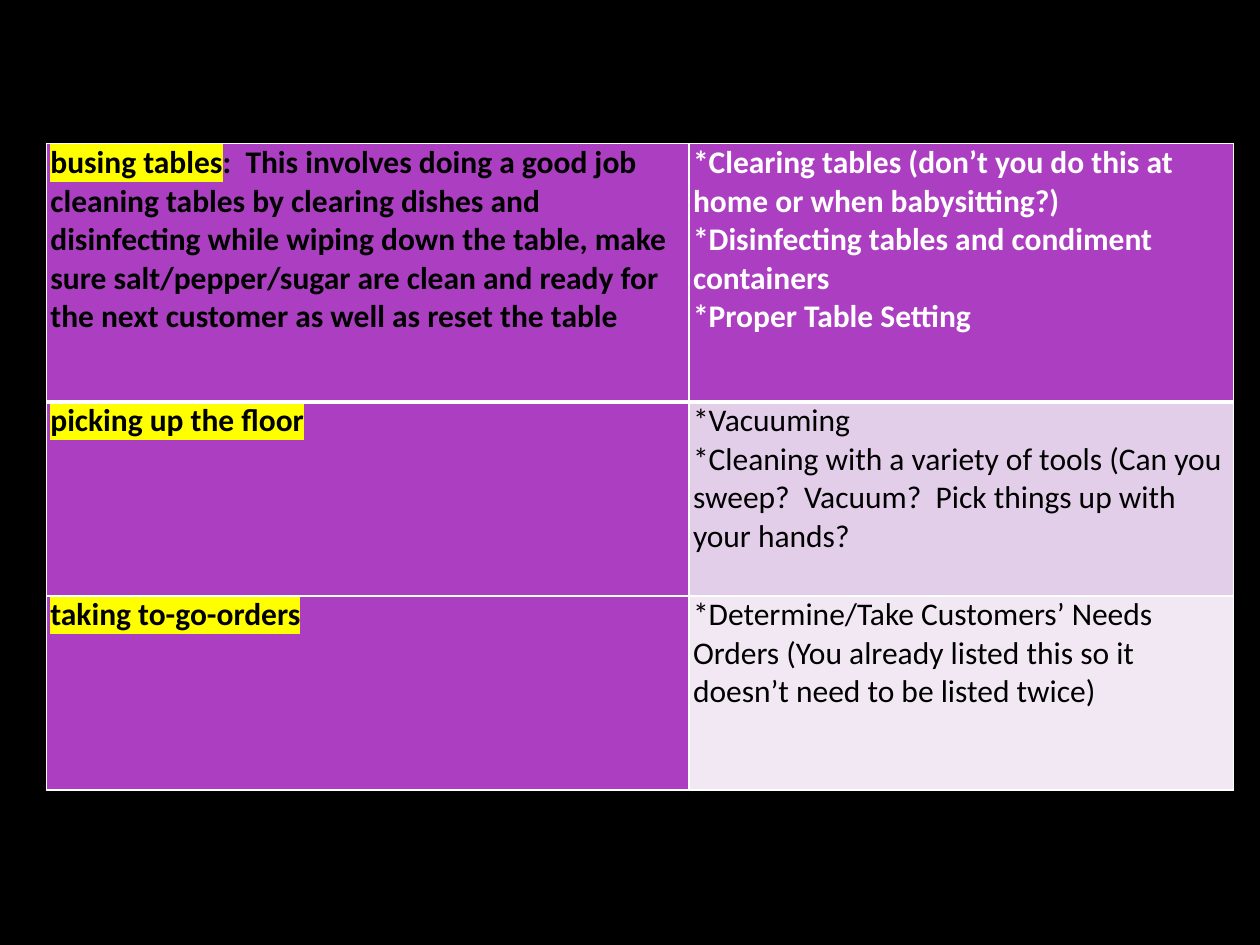
from lxml import etree
from pptx import Presentation
from pptx import util as u
from pptx.dml.color import RGBColor
from pptx.oxml import ns

# Content: (highlighted duty, explanation), then the skills it builds
ROWS = [
    (("busing tables",
      ":  This involves doing a good job cleaning tables by clearing dishes and "
      "disinfecting while wiping down the table, make sure salt/pepper/sugar are "
      "clean and ready for the next customer as well as reset the table"),
     ["*Clearing tables (don’t you do this at home or when babysitting?)",
      "*Disinfecting tables and condiment containers",
      "*Proper Table Setting"]),
    (("picking up the floor", ""),
     ["*Vacuuming",
      "*Cleaning with a variety of tools (Can you sweep?  Vacuum?  "
      "Pick things up with your hands?"]),
    (("taking to-go-orders", ""),
     ["*Determine/Take Customers’ Needs  Orders (You already listed this so it "
      "doesn’t need to be listed twice)"]),
]

COLORS = {"black": "000000", "white": "FFFFFF", "purple": "AC3EC1",
          "lilac": "E3CEE9", "pale": "F1E8F4", "yellow": "FFFF00"}
SKILL_FILLS = ["purple", "lilac", "pale"]
FONT, FONT_SIZE = "Calibri", 18
LEFT, TOP = 26.64, 82.08
COLUMN_WIDTHS = [367.2, 311.04]
ROW_HEIGHTS = [147.6, 110.88, 110.88]
THIN, THICK = 1, 3


def rgb(name):
    return RGBColor.from_string(COLORS[name])


def add_run(paragraph, words, color, bold, highlight=None):
    run = paragraph.add_run()
    run.text = words
    font = run.font
    font.name, font.size, font.bold = FONT, u.Pt(FONT_SIZE), bold
    font.color.rgb = rgb(color)
    if highlight:
        properties = run._r.get_or_add_rPr()
        mark = etree.Element(ns.qn("a:highlight"))
        etree.SubElement(mark, ns.qn("a:srgbClr"), val=COLORS[highlight])
        properties.find(ns.qn("a:solidFill")).addnext(mark)


def style_cell(cell, fill, top, bottom):
    cell.margin_left = cell.margin_right = u.Pt(2.16)
    cell.margin_top = cell.margin_bottom = 0
    properties = cell._tc.get_or_add_tcPr()
    for side, width in (("L", THIN), ("R", THIN), ("T", top), ("B", bottom)):
        line = etree.SubElement(properties, ns.qn(f"a:ln{side}"), w=str(u.Pt(width)))
        solid = etree.SubElement(line, ns.qn("a:solidFill"))
        etree.SubElement(solid, ns.qn("a:srgbClr"), val=COLORS["white"])
    cell.fill.solid()
    cell.fill.fore_color.rgb = rgb(fill)


# Slide
presentation = Presentation()
presentation.slide_width, presentation.slide_height = u.Pt(720), u.Pt(540)
slide = presentation.slides.add_slide(presentation.slide_layouts[6])
slide.background.fill.solid()
slide.background.fill.fore_color.rgb = rgb("black")

# Table grid
table = slide.shapes.add_table(
    len(ROWS), len(COLUMN_WIDTHS), u.Pt(LEFT), u.Pt(TOP),
    u.Pt(sum(COLUMN_WIDTHS)), u.Pt(sum(ROW_HEIGHTS))).table
for column, width in zip(table.columns, COLUMN_WIDTHS):
    column.width = u.Pt(width)
for row, height in zip(table.rows, ROW_HEIGHTS):
    row.height = u.Pt(height)

# Cells: the first row is the header, set off by a thick line
for index, ((duty, explanation), skills) in enumerate(ROWS):
    header = index == 0
    top = THICK if index == 1 else THIN
    bottom = THICK if header else THIN
    duty_cell, skill_cell = table.cell(index, 0), table.cell(index, 1)
    style_cell(duty_cell, "purple", top, bottom)
    style_cell(skill_cell, SKILL_FILLS[index], top, bottom)

    paragraph = duty_cell.text_frame.paragraphs[0]
    add_run(paragraph, duty, "black", True, "yellow")
    if explanation:
        add_run(paragraph, explanation, "black", True)

    text_frame = skill_cell.text_frame
    for number, skill in enumerate(skills):
        paragraph = text_frame.add_paragraph() if number else text_frame.paragraphs[0]
        add_run(paragraph, skill, "white" if header else "black", header)

presentation.save("out.pptx")
